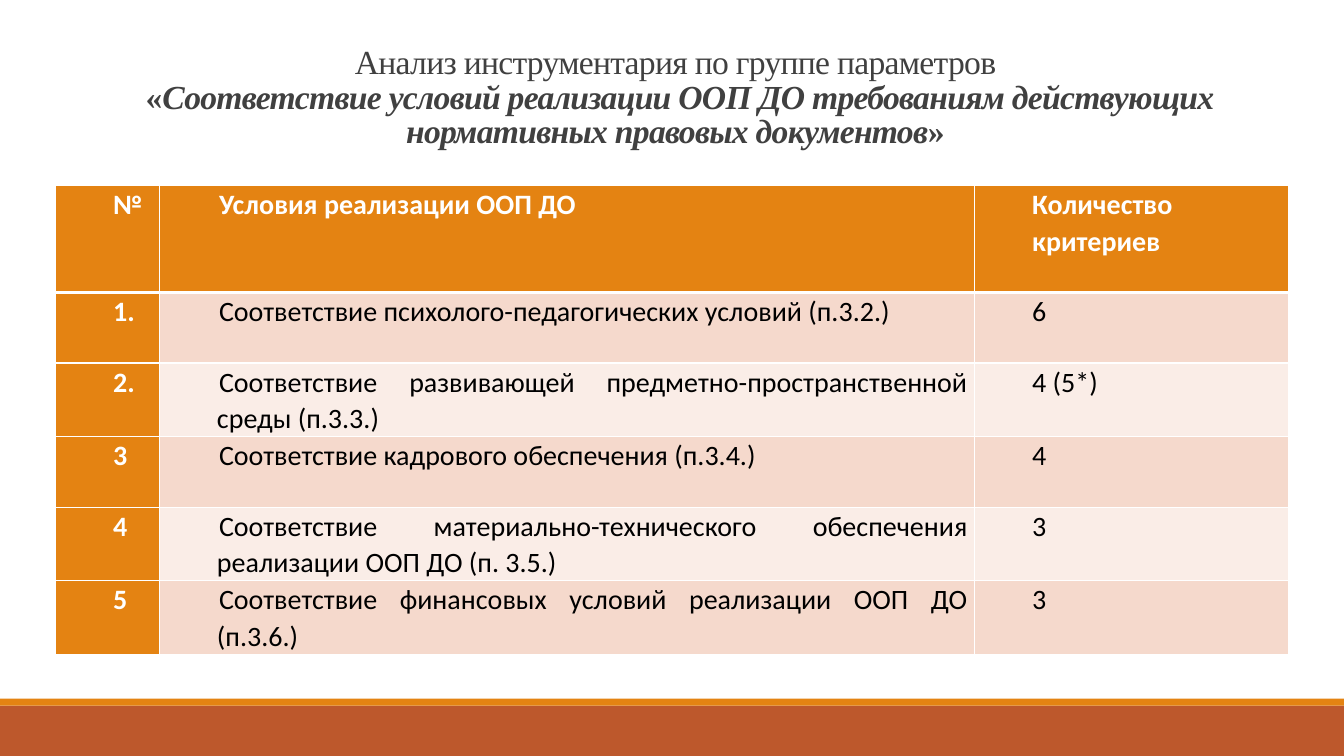
from lxml.etree import SubElement
from pptx import Presentation
from pptx.dml.color import RGBColor
from pptx.enum.shapes import MSO_SHAPE
from pptx.enum.text import MSO_ANCHOR, MSO_AUTO_SIZE, PP_ALIGN
from pptx.oxml.ns import qn
from pptx.util import Pt

# Content
TITLE_LINES = [
    [("Анализ инструментария по группе параметров", {})],
    [
        (" «", {"bold": True}),
        ("Соответствие условий реализации ООП ДО требованиям действующих "
         "нормативных правовых документов", {"bold": True, "italic": True}),
        ("»", {"bold": True}),
    ],
]
TABLE_ROWS = [
    ("№", "Условия реализации ООП ДО", "Количество критериев"),
    ("1.", "Соответствие психолого-педагогических условий (п.3.2.)", "6"),
    ("2.", "Соответствие развивающей предметно-пространственной среды (п.3.3.)", "4 (5*)"),
    ("3", "Соответствие кадрового обеспечения (п.3.4.)", "4"),
    ("4", "Соответствие материально-технического обеспечения реализации ООП ДО (п. 3.5.)", "3"),
    ("5", "Соответствие финансовых условий реализации ООП ДО (п.3.6.)", "3"),
]

# Theme and layout, lengths in points
THEME = {
    "title_font": "Times New Roman", "title_size": 24, "title_color": "404040",
    "table_font": "Calibri", "table_size": 20,
    "accent": "E48312", "footer": "BD582C", "white": "FFFFFF", "black": "000000",
    "bands": ("F5D9CC", "FAEDE7"),
}
SLIDE_WIDTH, SLIDE_HEIGHT = 960, 540
FOOTER_HEIGHT, STRIPE_HEIGHT = 36, 5
TITLE_BOX = (86.4, 22.3, 792, 113)
TABLE_LEFT, TABLE_TOP = 39.8, 132.5
COLUMN_WIDTHS = (74.2, 582.3, 224.5)
ROW_HEIGHTS = (76.4, 50.4, 52.6, 50.4, 52.6, 52.6)
FIRST_LINE_INDENTS = (0, 1.44, 0)


def color(name):
    return RGBColor.from_string(THEME.get(name, name))


def apply_format(target, values):
    for attribute, value in values.items():
        setattr(target, attribute, value)


def add_band(slide, top, height, fill):
    shape = slide.shapes.add_shape(
        MSO_SHAPE.RECTANGLE, 0, Pt(top), Pt(SLIDE_WIDTH), Pt(height))
    shape.shadow.inherit = False
    shape.fill.solid()
    shape.fill.fore_color.rgb = color(fill)
    shape.line.fill.background()


def set_borders(cell, widths):
    properties = cell._tc.get_or_add_tcPr()
    for position, (side, width) in enumerate(widths.items()):
        line = SubElement(properties, qn(f"a:ln{side}"), w=str(Pt(width)))
        fill = SubElement(line, qn("a:solidFill"))
        SubElement(fill, qn("a:srgbClr"), val=THEME["white"])
        properties.insert(position, line)


def fill_title(title):
    apply_format(title, dict(zip(("left", "top", "width", "height"), map(Pt, TITLE_BOX))))
    frame = title.text_frame
    apply_format(frame, {
        "word_wrap": True, "auto_size": MSO_AUTO_SIZE.NONE,
        "vertical_anchor": MSO_ANCHOR.BOTTOM,
        "margin_left": Pt(7.2), "margin_right": Pt(7.2),
        "margin_top": Pt(3.6), "margin_bottom": Pt(28),
    })
    paragraph = frame.paragraphs[0]
    apply_format(paragraph, {"alignment": PP_ALIGN.CENTER, "line_spacing": 0.85})
    for number, line in enumerate(TITLE_LINES):
        if number:
            paragraph.add_line_break()
        for text, emphasis in line:
            run = paragraph.add_run()
            run.text = text
            apply_format(run.font, {
                "name": THEME["title_font"], "size": Pt(THEME["title_size"]), **emphasis})
            run.font.color.rgb = color("title_color")
            run._r.get_or_add_rPr().set("spc", "-50")


def fill_cell(cell, text, row, column):
    accented = row == 0 or column == 0
    cell.fill.solid()
    cell.fill.fore_color.rgb = color("accent" if accented else THEME["bands"][(row - 1) % 2])
    apply_format(cell, {
        "margin_left": Pt(5.04), "margin_right": Pt(5.04),
        "margin_top": 0, "margin_bottom": 0, "vertical_anchor": MSO_ANCHOR.TOP,
    })
    set_borders(cell, {
        "L": 1, "R": 1, "T": 3 if row == 1 else 1, "B": 3 if row == 0 else 1})
    paragraph = cell.text_frame.paragraphs[0]
    apply_format(paragraph, {"alignment": PP_ALIGN.JUSTIFY, "line_spacing": 1.07})
    properties = paragraph._p.get_or_add_pPr()
    properties.set("marL", str(Pt(36)))
    properties.set("indent", str(Pt(FIRST_LINE_INDENTS[column])))
    run = paragraph.add_run()
    run.text = text
    apply_format(run.font, {
        "name": THEME["table_font"], "size": Pt(THEME["table_size"]), "bold": accented})
    run.font.color.rgb = color("white" if accented else "black")


def add_criteria_table(slide):
    table = slide.shapes.add_table(
        len(TABLE_ROWS), len(COLUMN_WIDTHS), Pt(TABLE_LEFT), Pt(TABLE_TOP),
        Pt(sum(COLUMN_WIDTHS)), Pt(sum(ROW_HEIGHTS))).table
    for column, width in zip(table.columns, COLUMN_WIDTHS):
        column.width = Pt(width)
    for row, height in zip(table.rows, ROW_HEIGHTS):
        row.height = Pt(height)
    for row, texts in enumerate(TABLE_ROWS):
        for column, text in enumerate(texts):
            fill_cell(table.cell(row, column), text, row, column)


def main():
    presentation = Presentation()
    presentation.slide_width = Pt(SLIDE_WIDTH)
    presentation.slide_height = Pt(SLIDE_HEIGHT)
    slide = presentation.slides.add_slide(presentation.slide_layouts[5])

    # Footer bands
    footer_top = SLIDE_HEIGHT - FOOTER_HEIGHT
    add_band(slide, footer_top, FOOTER_HEIGHT, "footer")
    add_band(slide, footer_top - STRIPE_HEIGHT, STRIPE_HEIGHT, "accent")

    # Title and table
    fill_title(slide.shapes.title)
    add_criteria_table(slide)
    presentation.save("out.pptx")


if __name__ == "__main__":
    main()
